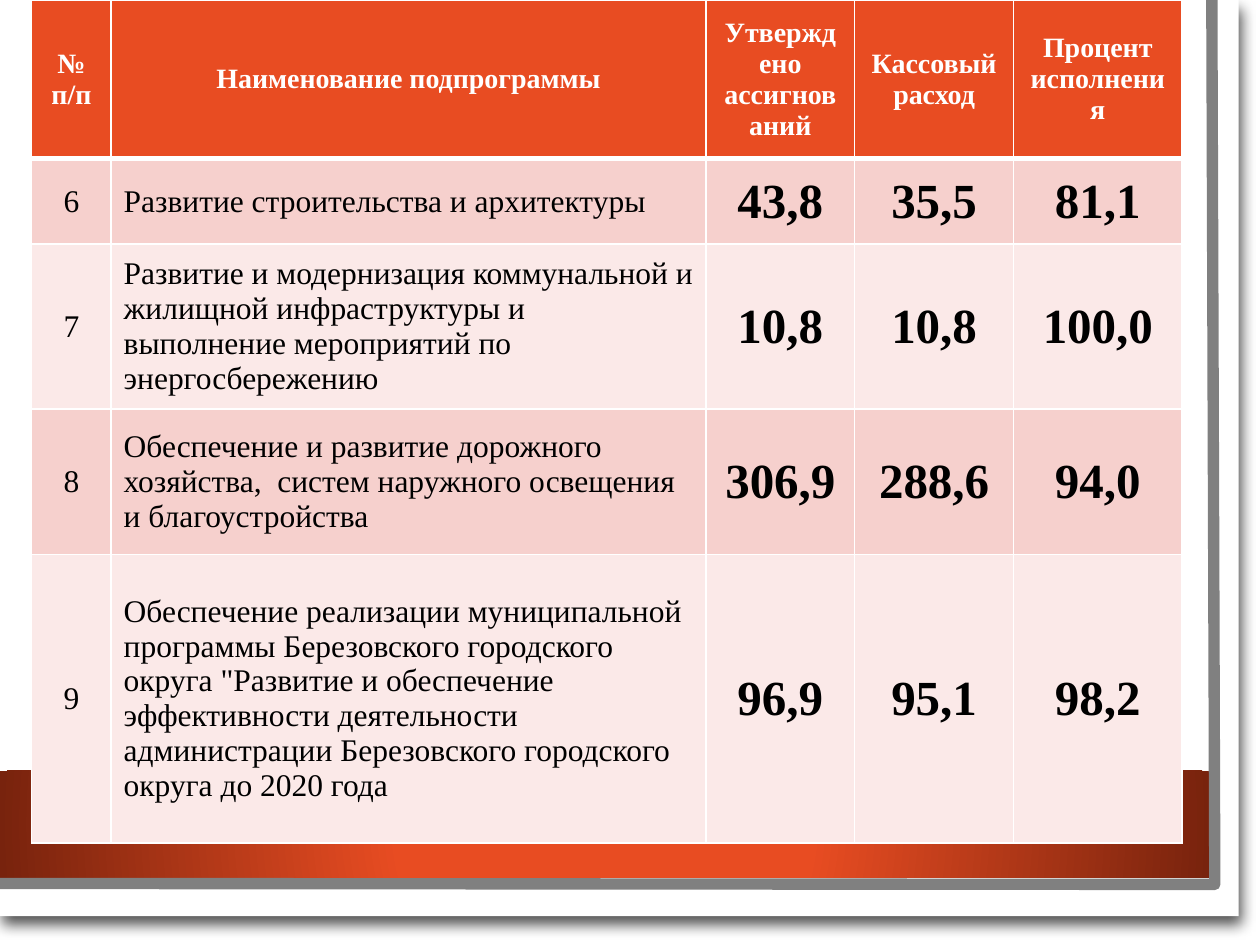
from lxml import etree
from pptx import Presentation
from pptx import util as u
from pptx.dml.color import RGBColor
from pptx.enum import shapes, text
from pptx.oxml import parse_xml
from pptx.oxml.ns import nsdecls, qn

FONT = "Times New Roman"
WHITE, ORANGE, RUST, GREY = "FFFFFF", "E84C22", "78230D", "808080"
BANDS = ["F6D0CD", "FBE9E8"]
COLS = [1.6, 11.99, 3.0, 3.2, 3.4]
HIGHS = [3.2, 1.72, 3.32, 2.94, 5.81]
HEAD = ["№\nп/п", "Наименование подпрограммы", "Утверждено ассигнований",
        "Кассовый расход", "Процент исполнения"]
ROWS = [
    ["6", "Развитие строительства и архитектуры", "43,8", "35,5", "81,1"],
    ["7", "Развитие и модернизация коммунальной и жилищной инфраструктуры "
     "и выполнение мероприятий по энергосбережению", "10,8", "10,8", "100,0"],
    ["8", "Обеспечение и развитие дорожного хозяйства,  систем наружного "
     "освещения и благоустройства", "306,9", "288,6", "94,0"],
    ["9", "Обеспечение реализации муниципальной программы Березовского "
     "городского округа \"Развитие и обеспечение эффективности деятельности "
     "администрации Березовского городского округа до 2020 года",
     "96,9", "95,1", "98,2"],
]


def color(code):
    return RGBColor.from_string(code)


def paint(item, code):
    item.fill.solid()
    item.fill.fore_color.rgb = color(code)


def add_rect(slide, *box):
    rect = slide.shapes.add_shape(shapes.MSO_SHAPE.RECTANGLE,
                                  *[u.Cm(v) for v in box])
    rect.shadow.inherit = False
    rect.line.fill.background()
    return rect


def add_sheet(slide):
    """White sheet with a soft shadow."""
    sheet = add_rect(slide, 0, 0, 24.97, 18.47)
    paint(sheet, WHITE)
    glow = sheet._element.spPr.find(qn("a:effectLst"))
    glow.append(parse_xml(
        f'<a:outerShdw {nsdecls("a")} blurRad="{u.Pt(7.8)}" dist="{u.Pt(6)}" '
        f'dir="{73 * 60000}"><a:srgbClr val="000000"><a:alpha val="68000"/>'
        '</a:srgbClr></a:outerShdw>'))


def add_band(slide):
    """Bottom band, bright in the middle and dark at the ends."""
    band = add_rect(slide, 0, 15.54, 24.38, 2.16)
    band.fill.gradient()
    for stop, (pos, code) in zip(band.fill.gradient_stops,
                                 [(0.34, ORANGE), (1, RUST)]):
        stop.position = pos
        stop.color.rgb = color(code)
    grad = band._element.spPr.find(qn("a:gradFill"))
    grad.replace(grad.find(qn("a:lin")), parse_xml(
        f'<a:path {nsdecls("a")} path="circle"><a:fillToRect l="50000" '
        't="50000" r="50000" b="50000"/></a:path>'))


def add_edge(slide):
    """Grey line along the right and bottom of the sheet."""
    pen = slide.shapes.build_freeform(u.Cm(24.43), 0)
    pen.add_line_segments([(u.Cm(24.49), u.Cm(17.83)),
                           (u.Cm(-0.05), u.Cm(17.81))], close=False)
    edge = pen.convert_to_shape()
    edge.shadow.inherit = False
    edge.fill.background()
    edge.line.color.rgb = color(GREY)
    edge.line.width = u.Pt(6.5)


def add_borders(cell, **widths):
    props = cell._tc.get_or_add_tcPr()
    for side in "LRTB":
        line = etree.SubElement(props, qn(f"a:ln{side}"),
                                w=str(u.Pt(widths.get(side, 1))))
        fill = etree.SubElement(line, qn("a:solidFill"))
        etree.SubElement(fill, qn("a:srgbClr"), val=WHITE)


def fill_cell(cell, words, back, ink, align, **form):
    paint(cell, back)
    cell.text = words
    cell.vertical_anchor = text.MSO_ANCHOR.MIDDLE
    for para in cell.text_frame.paragraphs:
        para.alignment = align
        for run in para.runs:
            run.font.color.rgb = color(ink)
            for key, value in {"name": FONT, **form}.items():
                setattr(run.font, key, value)


def add_grid(slide):
    frame = slide.shapes.add_table(
        len(HIGHS), len(COLS), u.Cm(0.64), 0, u.Cm(sum(COLS)), u.Cm(sum(HIGHS)))
    grid = frame.table
    for col, width in zip(grid.columns, COLS):
        col.width = u.Cm(width)
    for row, high in zip(grid.rows, HIGHS):
        row.height = u.Cm(high)
    mid, left = text.PP_ALIGN.CENTER, text.PP_ALIGN.LEFT
    for r, row in enumerate([HEAD] + ROWS):
        for c, words in enumerate(row):
            cell = grid.cell(r, c)
            # A thick rule parts the heading from the body
            add_borders(cell, **{0: {"B": 3}, 1: {"T": 3}}.get(r, {}))
            if r == 0:
                fill_cell(cell, words, ORANGE, WHITE, mid,
                          size=u.Pt(16), bold=True)
            else:
                fill_cell(cell, words, BANDS[(r - 1) % 2], "000000",
                          left if c == 1 else mid,
                          size=u.Pt(28 if c > 1 else 18), bold=c > 1)


def main():
    deck = Presentation()
    deck.slide_width, deck.slide_height = u.Cm(25.4), u.Cm(19.05)
    slide = deck.slides.add_slide(deck.slide_layouts[6])
    # Backdrop
    add_sheet(slide)
    add_band(slide)
    add_edge(slide)
    # Budget table
    add_grid(slide)
    deck.save("out.pptx")


if __name__ == "__main__":
    main()
